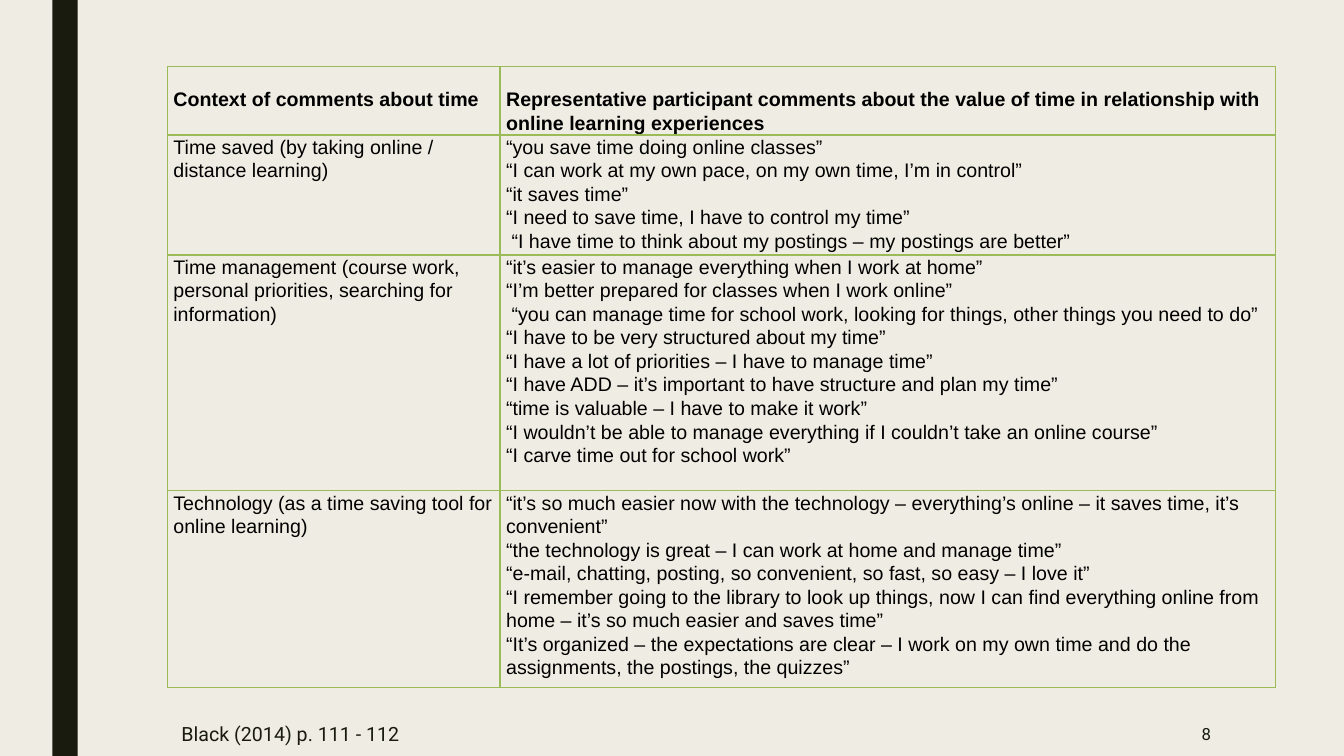
import pptx
import pptx.dml.color
import pptx.enum.shapes
import pptx.enum.text
import pptx.oxml.ns
import pptx.util
from lxml import etree

Inches, Pt = pptx.util.Inches, pptx.util.Pt
RGB = pptx.dml.color.RGBColor.from_string
ALIGN = pptx.enum.text.PP_ALIGN
MIDDLE = pptx.enum.text.MSO_ANCHOR.MIDDLE

# Content: each row is (context, comments)
HEADER = ("Context of comments about time",
          ["Representative participant comments about the value of time in "
           "relationship with online learning experiences"])
ROWS = [
    ("Time saved (by taking online / distance learning)", [
        "“you save time doing online classes”",
        "“I can work at my own pace, on my own time, I’m in control”",
        "“it saves time”",
        "“I need to save time, I have to control my time”",
        " “I have time to think about my postings – my postings are better”",
    ]),
    ("Time management (course work, personal priorities, searching for information)", [
        "“it’s easier to manage everything when I work at home”",
        "“I’m better prepared for classes when I work online”",
        " “you can manage time for school work, looking for things, other things you need to do”",
        "“I have to be very structured about my time”",
        "“I have a lot of priorities – I have to manage time”",
        "“I have ADD – it’s important to have structure and plan my time”",
        "“time is valuable – I have to make it work”",
        "“I wouldn’t be able to manage everything if I couldn’t take an online course”",
        "“I carve time out for school work”",
    ]),
    ("Technology (as a time saving tool for online learning)", [
        "“it’s so much easier now with the technology – everything’s online – it saves time, "
        "it’s convenient”",
        "“the technology is great – I can work at home and manage time”",
        "“e-mail, chatting, posting, so convenient, so fast, so easy – I love it”",
        "“I remember going to the library to look up things, now I can find everything online "
        "from home – it’s so much easier and saves time”",
        "“It’s organized – the expectations are clear – I work on my own time and do the "
        "assignments, the postings, the quizzes”",
    ]),
]
CITATION, PAGE = "Black (2014) p. 111 - 112", "8"

THEME = {"paper": "EFEDE3", "dark": "191B0E", "rule": "9BBB59", "ink": "000000",
         "table_font": "Arial", "footer_font": "Roboto",
         "body": 14, "page": 12, "spacing": 1.07, "thin": 1, "thick": 2.25}

# Layout in inches
TABLE_LEFT, TABLE_TOP = 1.66, 0.66
COL_WIDTHS = [3.3, 7.69]
ROW_HEIGHTS = [0.68, 1.19, 2.34, 1.95]
HEADER_INSET = 0.21
FOOTER_TOP, FOOTER_HEIGHT = 7.06, 0.44


def add_run(p, text, size, font, color, bold=False):
    r = p.add_run()
    r.text = text
    r.font.size, r.font.name, r.font.bold = Pt(size), font, bold
    r.font.color.rgb = RGB(color)


def set_border(cell, side, width):
    ln = etree.SubElement(cell._tc.get_or_add_tcPr(), pptx.oxml.ns.qn("a:ln" + side),
                          w=str(Pt(width)))
    fill = etree.SubElement(ln, pptx.oxml.ns.qn("a:solidFill"))
    etree.SubElement(fill, pptx.oxml.ns.qn("a:srgbClr"), val=THEME["rule"])


def fill_cell(cell, lines, row):
    cell.margin_left = cell.margin_right = Inches(0.06)
    cell.margin_top = Inches(HEADER_INSET if row == 0 else 0)
    cell.margin_bottom = 0
    thick_side = {0: "B", 1: "T"}.get(row)
    for side in "LRTB":
        set_border(cell, side, THEME["thick" if side == thick_side else "thin"])
    cell.fill.background()
    tf = cell.text_frame
    for i, line in enumerate(lines):
        p = tf.paragraphs[0] if i == 0 else tf.add_paragraph()
        p.line_spacing = THEME["spacing"]
        add_run(p, line, THEME["body"], THEME["table_font"], THEME["ink"], row == 0)


def add_footer(s, left, width, text, size, align, inset=0.1):
    tf = s.shapes.add_textbox(Inches(left), Inches(FOOTER_TOP),
                              Inches(width), Inches(FOOTER_HEIGHT)).text_frame
    tf.word_wrap = True
    tf.vertical_anchor = MIDDLE
    tf.margin_left = Inches(inset)
    p = tf.paragraphs[0]
    p.alignment = align
    add_run(p, text, size, THEME["footer_font"], THEME["dark"])


def main():
    prs = pptx.Presentation()
    prs.slide_width, prs.slide_height = Inches(13.33), Inches(7.5)
    s = prs.slides.add_slide(prs.slide_layouts[6])
    s.background.fill.solid()
    s.background.fill.fore_color.rgb = RGB(THEME["paper"])

    # Side bar
    bar = s.shapes.add_shape(pptx.enum.shapes.MSO_SHAPE.RECTANGLE,
                             Inches(0.52), 0, Inches(0.25), prs.slide_height)
    bar.shadow.inherit = False
    bar.fill.solid()
    bar.fill.fore_color.rgb = RGB(THEME["dark"])
    bar.line.fill.background()

    # Comment table
    table = s.shapes.add_table(len(ROW_HEIGHTS), len(COL_WIDTHS),
                               Inches(TABLE_LEFT), Inches(TABLE_TOP),
                               Inches(sum(COL_WIDTHS)), Inches(sum(ROW_HEIGHTS))).table
    table.first_row = table.horz_banding = False
    for column, width in zip(table.columns, COL_WIDTHS):
        column.width = Inches(width)
    for i, (context, comments) in enumerate([HEADER] + ROWS):
        table.rows[i].height = Inches(ROW_HEIGHTS[i])
        fill_cell(table.cell(i, 0), [context], i)
        fill_cell(table.cell(i, 1), comments, i)

    # Footer
    add_footer(s, TABLE_LEFT, 6.87, CITATION, THEME["body"], ALIGN.LEFT, inset=0.14)
    add_footer(s, 10.36, 1.75, PAGE, THEME["page"], ALIGN.RIGHT)

    prs.save("out.pptx")


if __name__ == "__main__":
    main()
